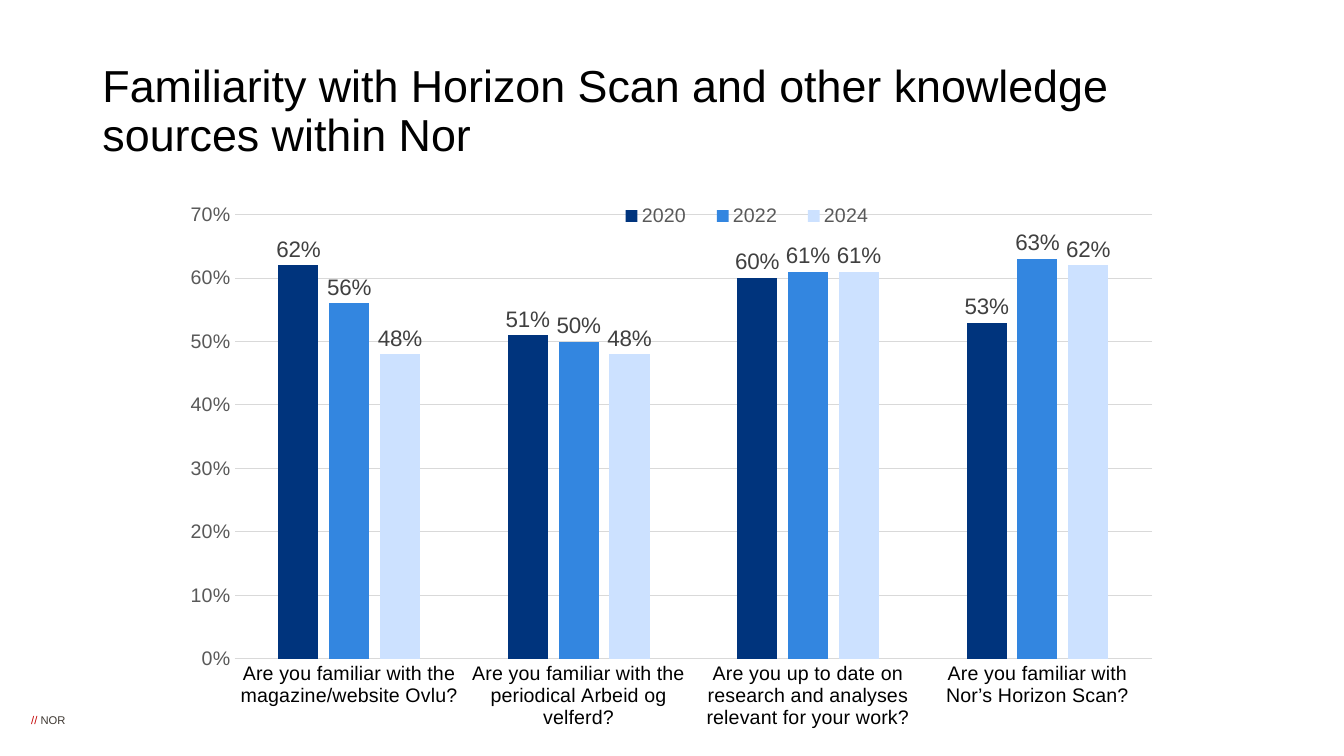
from pptx import Presentation
from pptx.chart.data import CategoryChartData
from pptx.dml.color import RGBColor
from pptx.enum.chart import (XL_CHART_TYPE as ChartType, XL_LABEL_POSITION as LabelPos,
                             XL_LEGEND_POSITION as LegendPos, XL_TICK_MARK as Tick)
from pptx.enum.text import MSO_ANCHOR as Anchor, PP_ALIGN as Align
from pptx.oxml import parse_xml
from pptx.oxml.ns import nsdecls
from pptx.util import Pt

FONT = "Arial"
COLORS = {
    "text": "000000", "axis": "595959", "label": "404040", "grid": "D9D9D9",
    "slashes": "C30000", "footer": "3E3832",
    "2020": "00347D", "2022": "3386E0", "2024": "CCE1FF",
}
QUESTIONS = [
    "Are you familiar with the magazine/website Ovlu?",
    "Are you familiar with the periodical Arbeid og velferd?",
    "Are you up to date on research and analyses relevant for your work?",
    "Are you familiar with Nor’s Horizon Scan?",
]
SHARES = {
    "2020": [0.62, 0.51, 0.60, 0.53],
    "2022": [0.56, 0.50, 0.61, 0.63],
    "2024": [0.48, 0.48, 0.61, 0.62],
}


def rgb(name):
    return RGBColor.from_string(COLORS[name])


def set_font(font, size, color):
    font.name, font.size, font.bold = FONT, Pt(size), False
    font.color.rgb = rgb(color)


def add_text(p, text, size=32, color="text"):
    r = p.add_run()
    r.text = text
    set_font(r.font, size, color)


def place(sp, box):
    sp.left, sp.top, sp.width, sp.height = (Pt(v) for v in box)


def set_layout(parent, x, y, w, h, inner=False):
    """Fix a chart part to fractions of the chart area."""
    for old in parent.findall(parent.tag.split("}")[0] + "}layout"):
        parent.remove(old)
    target = '<c:layoutTarget val="inner"/>' if inner else ""
    layout = parse_xml(
        f'<c:layout {nsdecls("c")}><c:manualLayout>{target}'
        '<c:xMode val="edge"/><c:yMode val="edge"/>'
        f'<c:x val="{x}"/><c:y val="{y}"/><c:w val="{w}"/><c:h val="{h}"/>'
        '</c:manualLayout></c:layout>')
    # The layout leads the plot area, but follows the legend position
    parent.insert(0 if inner else 1, layout)


def add_title(slide, box):
    sp = slide.shapes.title
    place(sp, box)
    tf = sp.text_frame
    tf.vertical_anchor = Anchor.MIDDLE
    p = tf.paragraphs[0]
    p.alignment, p.line_spacing = Align.LEFT, 0.9
    add_text(p, "Familiarity with Horizon Scan and other knowledge sources within Nor")


def add_footer(slide, box):
    tf = slide.shapes.add_textbox(*(Pt(v) for v in box)).text_frame
    tf.word_wrap = True
    tf.margin_left = tf.margin_top = tf.margin_right = tf.margin_bottom = 0
    p = tf.paragraphs[0]
    add_text(p, "// ", size=8, color="slashes")
    add_text(p, "NOR", size=8, color="footer")


def add_survey_chart(slide, box):
    data = CategoryChartData(number_format="0%")
    data.categories = QUESTIONS
    for year, shares in SHARES.items():
        data.add_series(year, shares)
    chart = slide.shapes.add_chart(
        ChartType.COLUMN_CLUSTERED, *(Pt(v) for v in box), data).chart
    chart.has_title = False
    set_font(chart.font, 10, "text")

    # Columns and their labels
    plot = chart.plots[0]
    plot.gap_width, plot.overlap, plot.vary_by_categories = 219, -27, False
    for series in plot.series:
        series.format.fill.solid()
        series.format.fill.fore_color.rgb = rgb(series.name)
        labels = series.data_labels
        labels.show_value, labels.position = True, LabelPos.OUTSIDE_END
        labels.number_format, labels.number_format_is_linked = "0%", False
        set_font(labels.font, 16, "label")

    # Axes
    questions, shares = chart.category_axis, chart.value_axis
    for axis, color in ((questions, "text"), (shares, "axis")):
        axis.major_tick_mark = axis.minor_tick_mark = Tick.NONE
        set_font(axis.tick_labels.font, 14, color)
    shares.minimum_scale, shares.maximum_scale, shares.major_unit = 0, 0.7, 0.1
    shares.tick_labels.number_format = "0%"
    shares.tick_labels.number_format_is_linked = False
    shares.format.line.fill.background()
    for line in (questions.format.line, shares.major_gridlines.format.line):
        line.color.rgb, line.width = rgb("grid"), Pt(0.75)

    # Legend above the columns
    chart.has_legend = True
    legend = chart.legend
    legend.position, legend.include_in_layout = LegendPos.BOTTOM, False
    set_font(legend.font, 14, "axis")
    set_layout(legend._element, 0.43, 0.02, 0.29, 0.04)
    set_layout(chart._chartSpace.chart.plotArea, 0.064, 0.038, 0.915, 0.758, inner=True)


def main():
    prs = Presentation()
    prs.slide_width, prs.slide_height = Pt(960), Pt(540)
    slide = prs.slides.add_slide(prs.slide_layouts[5])
    add_footer(slide, (22.3, 509.8, 60, 9.4))
    add_title(slide, (66, 38.2, 828, 84.2))
    add_survey_chart(slide, (121.7, 137.5, 716.4, 418.3))
    prs.save("out.pptx")


if __name__ == "__main__":
    main()
